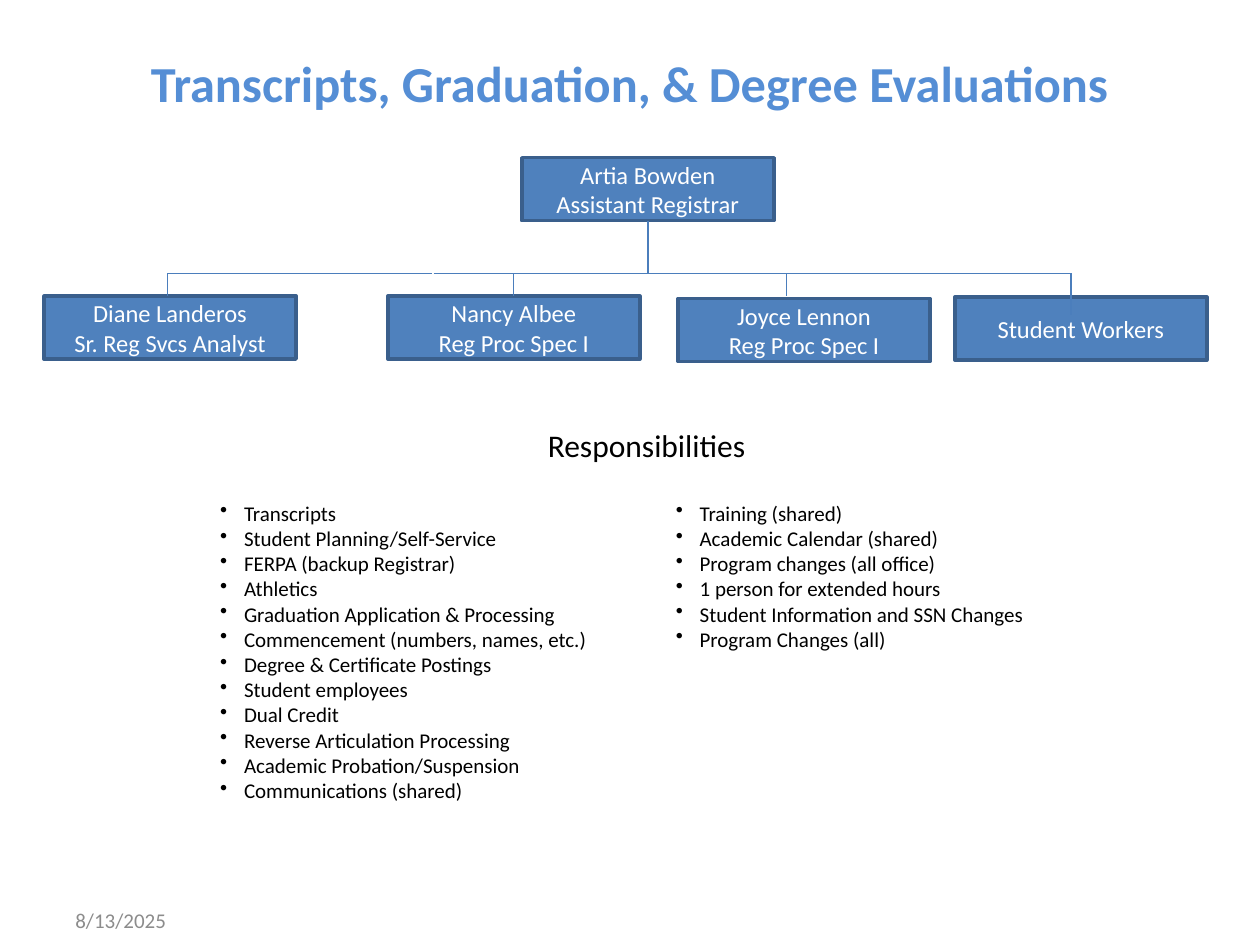
import lxml.etree
import pptx
import pptx.util
import pptx.dml.color
import pptx.enum.shapes
import pptx.enum.text
import pptx.oxml.ns

Cm, Pt = pptx.util.Cm, pptx.util.Pt
RGBColor = pptx.dml.color.RGBColor
PP_ALIGN = pptx.enum.text.PP_ALIGN
MSO_ANCHOR = pptx.enum.text.MSO_ANCHOR
MSO_CONNECTOR = pptx.enum.shapes.MSO_CONNECTOR
qn = pptx.oxml.ns.qn

TITLE_BLUE = RGBColor(0x55, 0x8E, 0xD5)
BOX_BLUE = RGBColor(0x4F, 0x81, 0xBD)
BORDER_BLUE = RGBColor(0x3A, 0x5F, 0x8C)
LINE_BLUE = RGBColor(0x4B, 0x7E, 0xBC)
GREY = RGBColor(0x8C, 0x8C, 0x8C)
WHITE = RGBColor(0xFF, 0xFF, 0xFF)
BLACK = RGBColor(0x00, 0x00, 0x00)

BOX_WIDTH, BOX_HEIGHT = 5.08, 1.27
BUS_Y = 5.51
BRANCH_WIDTH, BRANCH_END = 5.33, 5.97
STAFF_DROPS = [3.38, 10.36, 15.85]
WORKERS_DROP = 21.59

POSITIONS = [
    (10.52, 3.18, ["Artia Bowden", "Assistant Registrar"]),
    (0.89, 5.97, ["Diane Landeros", "Sr. Reg Svcs Analyst"]),
    (7.82, 5.97, ["Nancy Albee", "Reg Proc Spec I"]),
    (13.67, 6.02, ["Joyce Lennon", "Reg Proc Spec I"]),
    (19.25, 5.99, ["Student Workers"]),
]

RESPONSIBILITIES = [
    "Transcripts",
    "Student Planning/Self-Service",
    "FERPA (backup Registrar)",
    "Athletics",
    "Graduation Application & Processing",
    "Commencement (numbers, names, etc.)",
    "Degree & Certificate Postings",
    "Student employees",
    "Dual Credit",
    "Reverse Articulation Processing",
    "Academic Probation/Suspension",
    "Communications (shared)",
    "Training (shared)",
    "Academic Calendar (shared)",
    "Program changes (all office)",
    "1 person for extended hours",
    "Student Information and SSN Changes",
    "Program Changes (all)",
]


def write_lines(frame, lines, size, color, align, bold=False):
    frame.word_wrap = True
    for index, line in enumerate(lines):
        paragraph = frame.paragraphs[0] if index == 0 else frame.add_paragraph()
        paragraph.text = line
        paragraph.alignment = align
        paragraph.font.name = "Calibri"
        paragraph.font.size = Pt(size)
        paragraph.font.bold = bold
        paragraph.font.color.rgb = color


def add_text(slide, left, top, width, height, lines, size, color,
             align=PP_ALIGN.LEFT, anchor=MSO_ANCHOR.TOP, bold=False):
    box = slide.shapes.add_textbox(Cm(left), Cm(top), Cm(width), Cm(height))
    box.text_frame.vertical_anchor = anchor
    write_lines(box.text_frame, lines, size, color, align, bold)
    return box.text_frame


def add_position(slide, left, top, lines):
    position = slide.shapes.add_shape(
        pptx.enum.shapes.MSO_SHAPE.RECTANGLE,
        Cm(left), Cm(top), Cm(BOX_WIDTH), Cm(BOX_HEIGHT))
    position.shadow.inherit = False
    position.fill.solid()
    position.fill.fore_color.rgb = BOX_BLUE
    position.line.color.rgb = BORDER_BLUE
    position.line.width = Pt(2)
    position.text_frame.vertical_anchor = MSO_ANCHOR.MIDDLE
    write_lines(position.text_frame, lines, 14, WHITE, PP_ALIGN.CENTER)


def add_link(slide, x1, y1, x2, y2, kind=MSO_CONNECTOR.STRAIGHT):
    link = slide.shapes.add_connector(kind, Cm(x1), Cm(y1), Cm(x2), Cm(y2))
    link.line.color.rgb = LINE_BLUE
    link.line.width = Pt(0.75)
    properties = link._element.spPr
    lxml.etree.SubElement(properties, qn("a:effectLst"))
    if kind == MSO_CONNECTOR.ELBOW:
        properties.find(qn("a:prstGeom")).set("prst", "bentConnector2")


def add_responsibilities(slide):
    duties = add_text(slide, 4.19, 9.96, 18.87, 6.35, RESPONSIBILITIES, 12, BLACK)
    duties._txBody.find(qn("a:bodyPr")).set("numCol", "2")
    for paragraph in duties.paragraphs:
        properties = paragraph._p.get_or_add_pPr()
        properties.set("marL", str(Cm(0.48)))
        properties.set("indent", str(-Cm(0.48)))
        bullet = lxml.etree.Element(qn("a:buChar"), char="•")
        properties.find(qn("a:defRPr")).addprevious(bullet)


def main():
    deck = pptx.Presentation()
    deck.slide_width, deck.slide_height = Cm(25.4), Cm(19.05)
    slide = deck.slides.add_slide(deck.slide_layouts[6])

    add_text(slide, 2.54, 0.64, 20.32, 2.03,
             ["Transcripts, Graduation, & Degree Evaluations"], 28.8, TITLE_BLUE,
             PP_ALIGN.CENTER, MSO_ANCHOR.MIDDLE, bold=True)
    for left, top, lines in POSITIONS:
        add_position(slide, left, top, lines)

    add_link(slide, 13.06, 4.45, 13.06, BUS_Y)
    add_link(slide, 8.74, BUS_Y, WORKERS_DROP, BUS_Y)
    add_link(slide, WORKERS_DROP, BUS_Y, WORKERS_DROP, 6.35)
    for drop in STAFF_DROPS:
        add_link(slide, drop + BRANCH_WIDTH, BUS_Y, drop, BRANCH_END,
                 MSO_CONNECTOR.ELBOW)

    add_text(slide, 3.61, 8.46, 18.85, 1.07, ["Responsibilities"], 18, BLACK,
             PP_ALIGN.CENTER)
    add_responsibilities(slide)
    add_text(slide, 1.27, 18.03, 5.92, 1.02, ["8/13/2025"], 12, GREY,
             anchor=MSO_ANCHOR.MIDDLE)
    deck.save("out.pptx")


if __name__ == "__main__":
    main()
